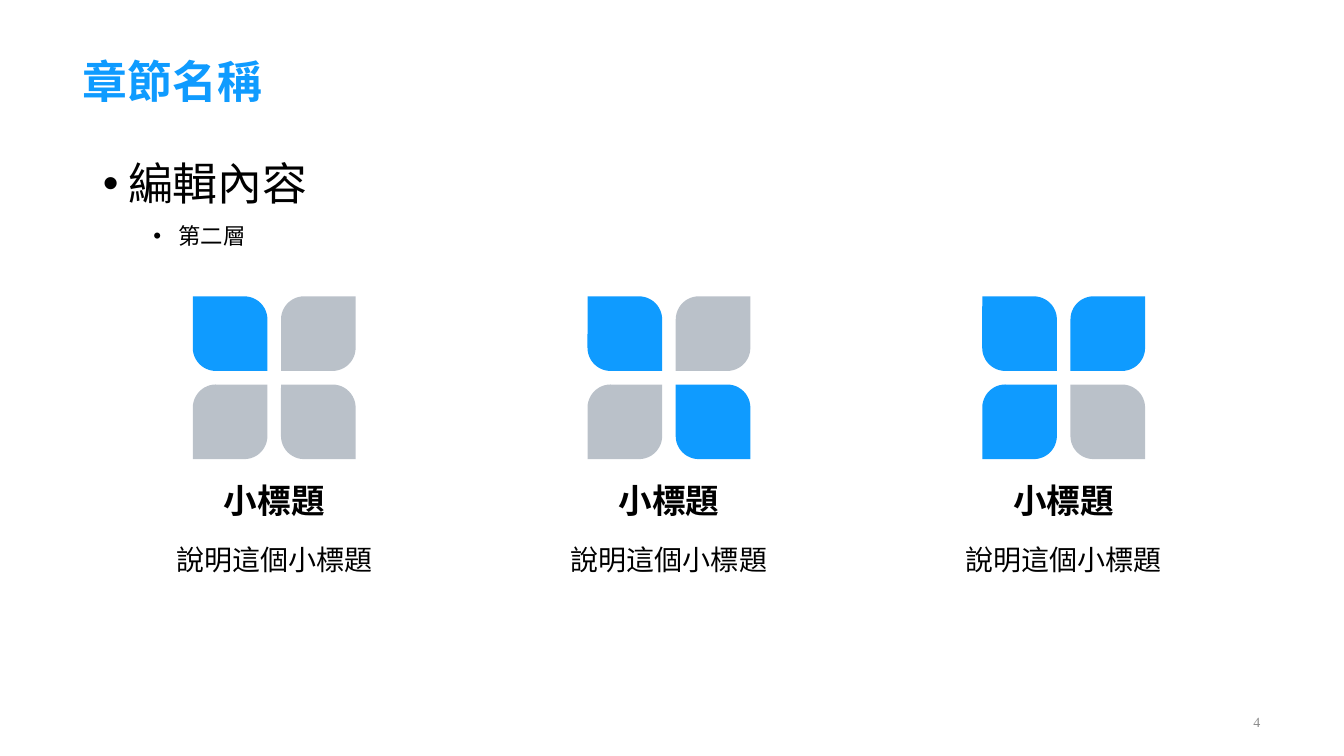
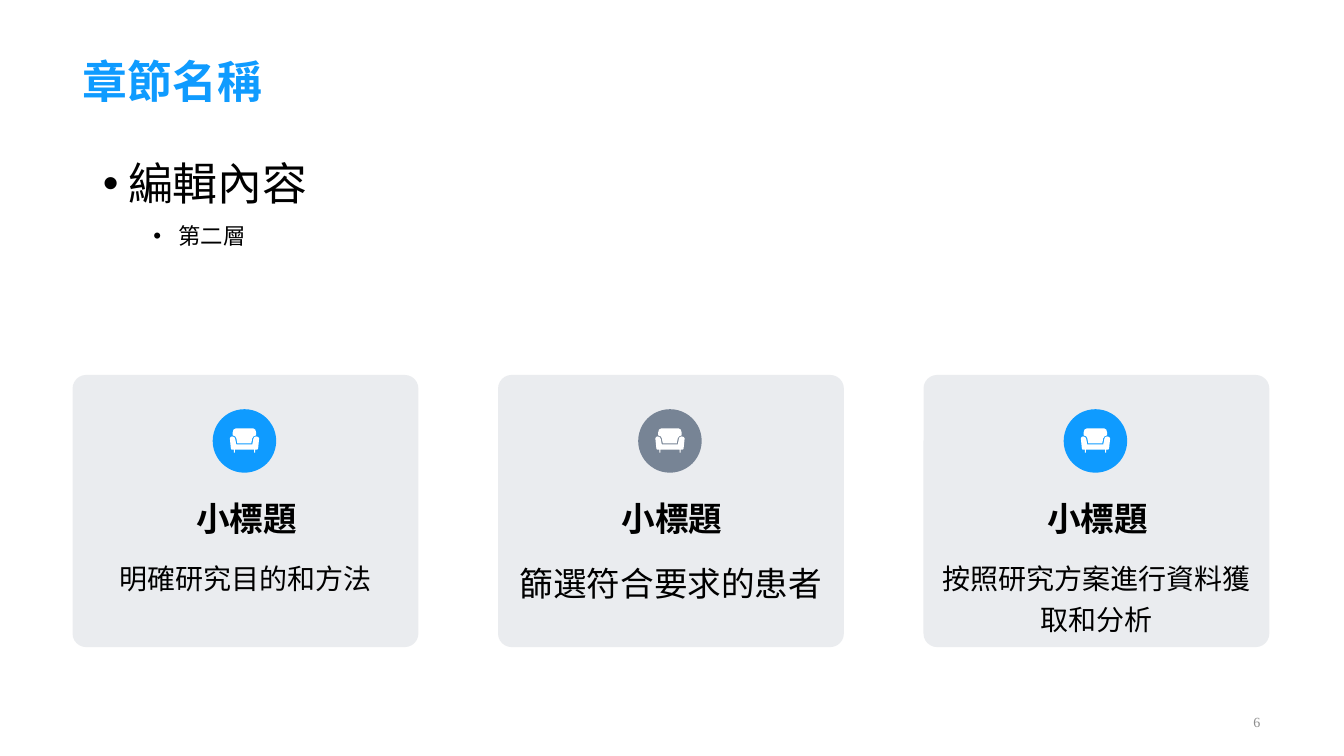
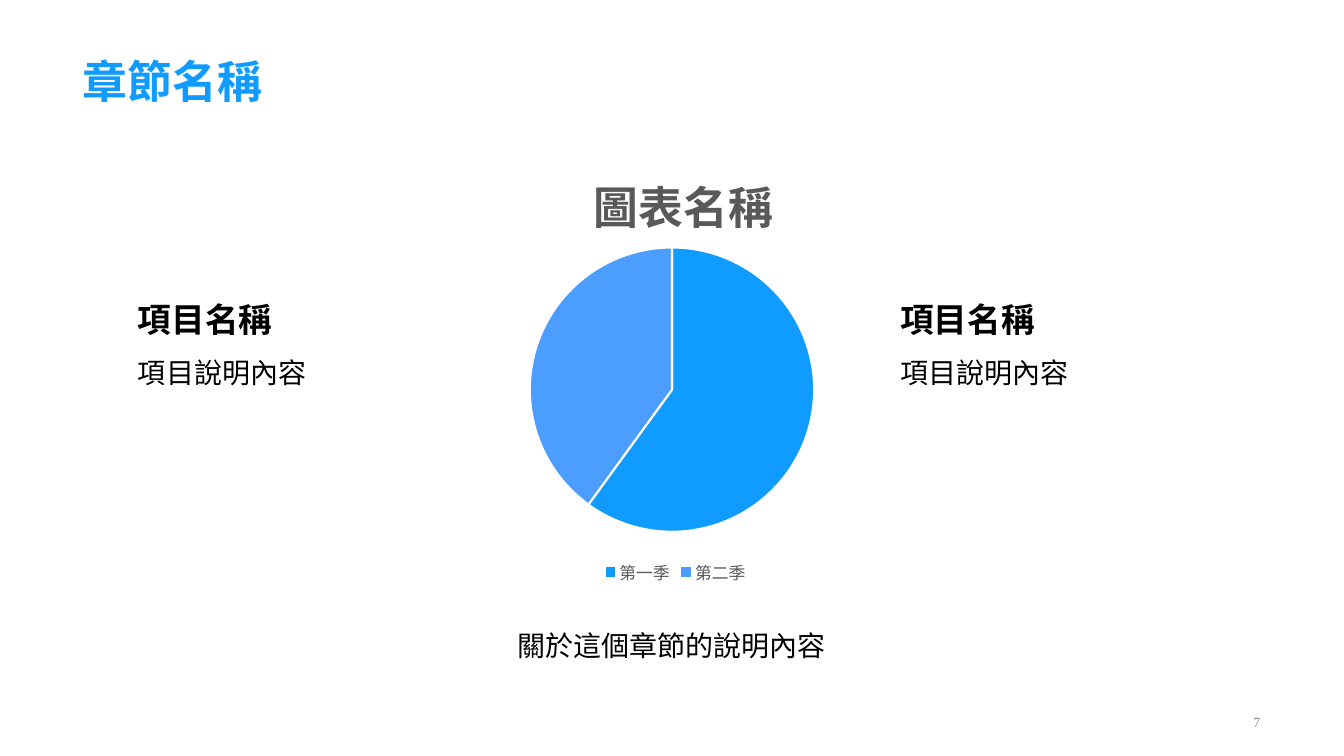
from lxml import etree
from pptx import Presentation
from pptx.chart.data import CategoryChartData
from pptx.dml.color import RGBColor
from pptx.enum.chart import XL_CHART_TYPE, XL_LEGEND_POSITION
from pptx.enum.shapes import MSO_SHAPE
from pptx.enum.text import MSO_ANCHOR, MSO_AUTO_SIZE, PP_ALIGN
from pptx.oxml.ns import qn
from pptx.util import Inches, Pt

# Shared look
BLUE = RGBColor(0x0F, 0x9B, 0xFF)
LIGHT_BLUE = RGBColor(0x4B, 0x9E, 0xFF)
SLATE = RGBColor(0x77, 0x84, 0x95)
BLACK = RGBColor(0, 0, 0)
WHITE = RGBColor(0xFF, 0xFF, 0xFF)
DARK_GREY = RGBColor(0x59, 0x59, 0x59)
PAGE_GREY = RGBColor(0x8C, 0x8C, 0x8C)
SERIF = "Times New Roman"
SANS = "Arial"

LEFT, CENTER, RIGHT = PP_ALIGN.LEFT, PP_ALIGN.CENTER, PP_ALIGN.RIGHT
TOP, MIDDLE, BOTTOM = MSO_ANCHOR.TOP, MSO_ANCHOR.MIDDLE, MSO_ANCHOR.BOTTOM
NO_FIT, GROW = MSO_AUTO_SIZE.NONE, MSO_AUTO_SIZE.SHAPE_TO_FIT_TEXT
PETAL = MSO_SHAPE.ROUND_2_DIAG_RECTANGLE
CARD = MSO_SHAPE.ROUNDED_RECTANGLE
DISC = MSO_SHAPE.OVAL
PIE = XL_CHART_TYPE.PIE
LEGEND_BOTTOM = XL_LEGEND_POSITION.BOTTOM

# Page grid, in inches
PAGE_W, PAGE_H = 13.33, 7.5
MARGIN, CONTENT_W = 0.72, 11.88
TITLE_LAYOUT_WITH_BODY, TITLE_LAYOUT_ONLY = 1, 5

# Sofa icon outlines, in thousandths of an inch
SOFA_SEAT = [
    (260, 80), (281, 86), (290, 100), (280, 200), (275, 209), (260, 212),
    (250, 212), (250, 240), (240, 240), (240, 212), (50, 212), (50, 240),
    (40, 240), (40, 212), (22, 212), (13, 208), (10, 200), (0, 100),
    (7, 86), (22, 80), (42, 86), (52, 100), (64, 160), (222, 160),
    (234, 100), (242, 86)]
SOFA_BACK = [
    (230, 0), (252, 12), (260, 40), (260, 70), (236, 78), (222, 98),
    (212, 150), (74, 150), (64, 98), (52, 78), (28, 70), (28, 40),
    (36, 12), (60, 0)]


def inches(*lengths):
    return [Inches(length) for length in lengths]


def style_font(font, size, color=BLACK, bold=False, name=SERIF):
    font.name, font.size, font.bold = name, Pt(size), bold
    font.color.rgb = color


def add_run(paragraph, text, size, color=BLACK, bold=False, name=SERIF):
    run = paragraph.add_run()
    run.text = text
    style_font(run.font, size, color, bold, name)


def add_text(shapes, box, text, size, align=LEFT, anchor=TOP, wrap=True,
             fit=NO_FIT, spacing=None, **look):
    frame = shapes.add_textbox(*inches(*box)).text_frame
    frame.word_wrap, frame.auto_size = wrap, fit
    frame.vertical_anchor = anchor
    paragraph = frame.paragraphs[0]
    paragraph.alignment = align
    if spacing:
        paragraph.line_spacing = spacing
    add_run(paragraph, text, size, **look)


def add_heading(shapes, box, text, align=CENTER, name=SERIF):
    add_text(shapes, box, text, 24, align, BOTTOM, wrap=False, bold=True, name=name)


def add_description(shapes, box, text, align=CENTER, size=20, name=SERIF):
    add_text(shapes, box, text, size, align, fit=GROW, spacing=1.2, name=name)


def paint(shape, color, opacity=None):
    shape.shadow.inherit = False
    shape.fill.solid()
    shape.fill.fore_color.rgb = color
    shape.line.fill.background()
    if opacity is not None:
        tint = next(shape._element.spPr.iter(qn("a:srgbClr")))
        etree.SubElement(tint, qn("a:alpha")).set("val", str(opacity * 1000))


def add_form(shapes, form, box, color, opacity=None, corners=()):
    shape = shapes.add_shape(form, *inches(*box))
    for index, corner in enumerate(corners):
        shape.adjustments[index] = corner
    paint(shape, color, opacity)


def place(placeholder, box):
    (placeholder.left, placeholder.top,
     placeholder.width, placeholder.height) = inches(*box)


# Title and page number of every slide
def start_slide(deck, layout, page):
    slide = deck.slides.add_slide(deck.slide_layouts[layout])
    title = slide.shapes.title
    place(title, (MARGIN, 0, CONTENT_W, 1.12))
    frame = title.text_frame
    frame.vertical_anchor, frame.auto_size = BOTTOM, NO_FIT
    frame.paragraphs[0].alignment = LEFT
    add_run(frame.paragraphs[0], "章節名稱", 32, BLUE, bold=True)
    add_text(slide.shapes, (MARGIN + CONTENT_W - 4, 7.01, 4, 0.3), page, 10,
             RIGHT, MIDDLE, color=PAGE_GREY)
    return slide


# Two-level bullet list
def fill_body(slide, height):
    body = slide.placeholders[1]
    place(body, (0.92, 1.39, 11.5, height))
    frame = body.text_frame
    frame.auto_size, frame.vertical_anchor = NO_FIT, TOP
    levels = [("編輯內容", 32, 0.25, 0), ("第二層", 16, 0.75, 5)]
    for level, (text, size, indent, before) in enumerate(levels):
        paragraph = frame.add_paragraph() if level else frame.paragraphs[0]
        paragraph.level = level
        properties = paragraph._p.get_or_add_pPr()
        properties.set("marL", str(Inches(indent)))
        properties.set("indent", str(Inches(-0.25)))
        etree.SubElement(properties, qn("a:buFont")).set("typeface", SANS)
        etree.SubElement(properties, qn("a:buChar")).set("char", "•")
        paragraph.line_spacing = 1.2
        paragraph.space_before = Pt(before)
        paragraph.alignment = LEFT
        add_run(paragraph, text, size)


# Four petals, some lit, above a heading and a description
def add_petal_column(slide, left, top, lit):
    shapes = slide.shapes.add_group_shape().shapes
    width, petal, pitch = 2.46, 0.74, 0.875
    first = left + (width - petal - pitch) / 2
    for row in range(2):
        for col in range(2):
            box = (first + col * pitch, top + row * pitch, petal, petal)
            corners = (0, 0.31) if row == col else (0.31, 0)
            if (row, col) in lit:
                add_form(shapes, PETAL, box, BLUE, corners=corners)
            else:
                add_form(shapes, PETAL, box, SLATE, 50, corners)
    add_heading(shapes, (left, top + 1.9, width, 0.37), "小標題", name=SANS)
    add_description(shapes, (left, top + 2.33, width, 0.47), "說明這個小標題", name=SANS)


def build_petal_slide(deck):
    slide = start_slide(deck, TITLE_LAYOUT_WITH_BODY, "4")
    fill_body(slide, 1.49)
    lit_petals = [{(0, 0)}, {(0, 0), (1, 1)}, {(0, 0), (0, 1), (1, 0)}]
    for column, lit in enumerate(lit_petals):
        add_petal_column(slide, 1.49 + column * 3.915, 2.94, lit)


def add_sofa(shapes, left, top):
    builder = shapes.build_freeform(*SOFA_SEAT[0], scale=Inches(1) / 1000)
    builder.add_line_segments(SOFA_SEAT[1:], close=True)
    builder.move_to(*SOFA_BACK[0])
    builder.add_line_segments(SOFA_BACK[1:], close=True)
    paint(builder.convert_to_shape(*inches(left, top)), WHITE)


# Card with a round icon, a heading and a description
def add_card(slide, left, top, color, description, size):
    shapes = slide.shapes.add_group_shape().shapes
    width = 3.43
    add_form(shapes, CARD, (left, top, width, 2.7), SLATE, 15, (0.05,))
    add_heading(shapes, (left + 0.27, top + 1.24, 2.91, 0.43), "小標題")
    add_description(shapes, (left, top + 1.74, width, 0.47), description, size=size)
    add_form(shapes, DISC, (left + 1.39, top + 0.34, 0.63, 0.63), color)
    add_sofa(shapes, left + 1.56, top + 0.53)


def build_card_slide(deck):
    slide = start_slide(deck, TITLE_LAYOUT_WITH_BODY, "6")
    fill_body(slide, 2.14)
    cards = [(BLUE, "明確研究目的和方法", 20),
             (SLATE, "篩選符合要求的患者", 24),
             (BLUE, "按照研究方案進行資料獲取和分析", 20)]
    for column, card in enumerate(cards):
        add_card(slide, MARGIN + column * 4.22, 3.72, *card)


def set_chart_layout(part, target=None, **shares):
    layout = part.find(qn("c:layout"))
    if layout is None:
        layout = etree.Element(qn("c:layout"))
        part.insert(0, layout)
    manual = etree.SubElement(layout, qn("c:manualLayout"))
    settings = {"xMode": "edge", "yMode": "edge", **shares}
    if target:
        settings = {"layoutTarget": target, **settings}
    for tag, value in settings.items():
        etree.SubElement(manual, qn("c:" + tag)).set("val", str(value))


# Pie chart with title and legend
def add_pie(slide, box):
    quarters = CategoryChartData()
    quarters.categories = ["第一季", "第二季"]
    quarters.add_series("Series 1", (60, 40))
    chart = slide.shapes.add_chart(PIE, *inches(*box), quarters).chart
    style_font(chart.font, 10)
    chart.has_title = True
    add_run(chart.chart_title.text_frame.paragraphs[0], "圖表名稱", 32, DARK_GREY, True)
    set_chart_layout(chart.chart_title._element, x=0.37, y=0.07)
    set_chart_layout(chart._chartSpace.chart.plotArea, "inner",
                     x=0.29, y=0.26, w=0.41, h=0.62)
    chart.has_legend = True
    chart.legend.position = LEGEND_BOTTOM
    chart.legend.include_in_layout = False
    style_font(chart.legend.font, 12, DARK_GREY)
    plot = chart.plots[0]
    plot.vary_by_categories = True
    for index, color in enumerate((BLUE, LIGHT_BLUE)):
        wedge = plot.series[0].points[index].format
        wedge.fill.solid()
        wedge.fill.fore_color.rgb = color
        wedge.line.color.rgb = WHITE
        wedge.line.width = Pt(1.5)


def build_chart_slide(deck):
    slide = start_slide(deck, TITLE_LAYOUT_ONLY, "7")
    for left in (1.27, 8.83):
        add_heading(slide.shapes, (left, 3.07, 3.29, 0.34), "項目名稱", LEFT)
        add_description(slide.shapes, (left, 3.41, 3.29, 0.47), "項目說明內容", LEFT)
    add_description(slide.shapes, (MARGIN, 6.12, CONTENT_W, 0.47), "關於這個章節的說明內容")
    add_pie(slide, (3.26, 1.25, 6.88, 4.59))


def main():
    deck = Presentation()
    deck.slide_width, deck.slide_height = inches(PAGE_W, PAGE_H)
    build_petal_slide(deck)
    build_card_slide(deck)
    build_chart_slide(deck)
    deck.save("out.pptx")


if __name__ == "__main__":
    main()
